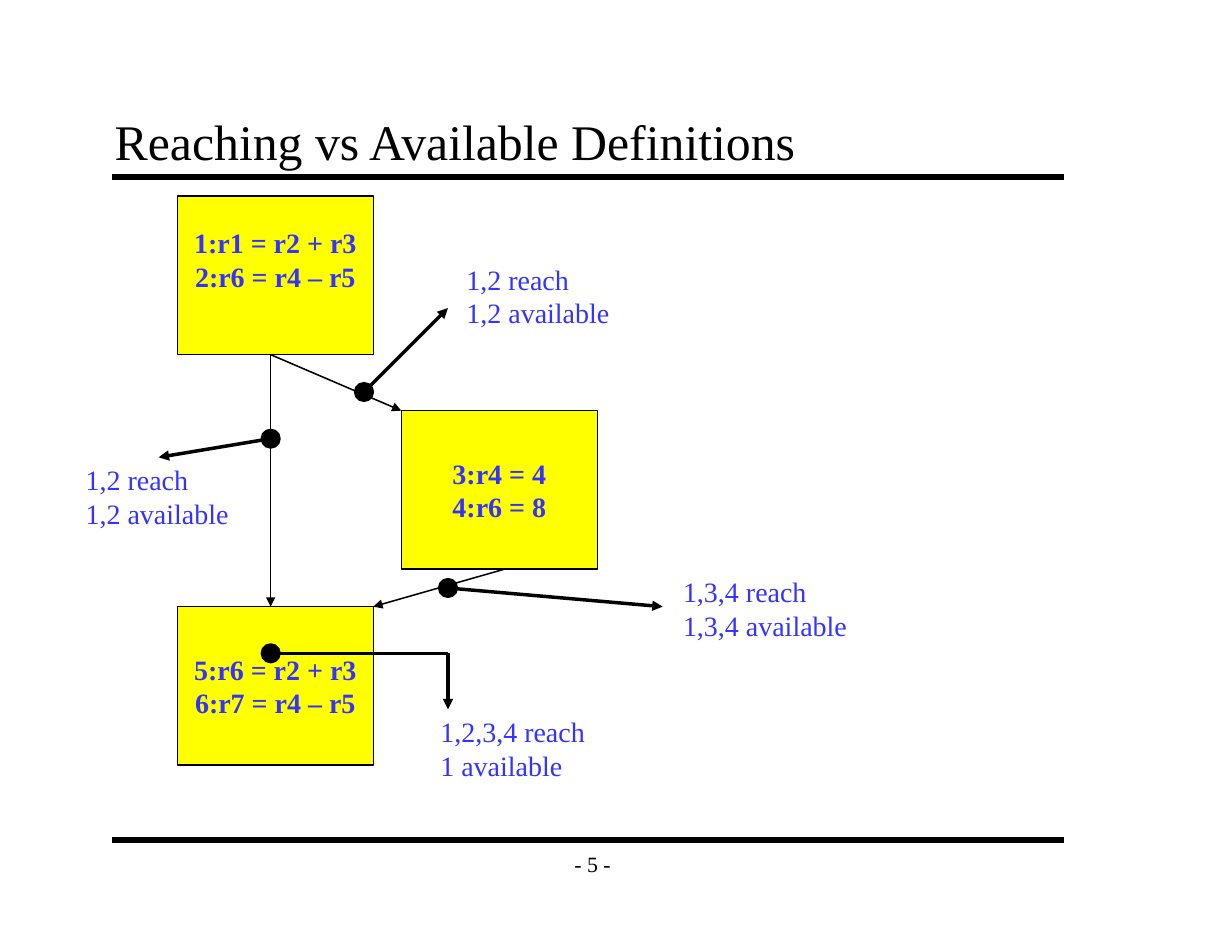
from dataclasses import dataclass

from lxml import etree
from pptx import Presentation
from pptx.dml.color import RGBColor
from pptx.enum.shapes import MSO_CONNECTOR, MSO_SHAPE
from pptx.enum.text import MSO_ANCHOR, PP_ALIGN
from pptx.oxml.ns import qn
from pptx.util import Emu, Pt

STRAIGHT = MSO_CONNECTOR.STRAIGHT
RECTANGLE, OVAL = MSO_SHAPE.RECTANGLE, MSO_SHAPE.OVAL
TOP, MIDDLE, BOTTOM = MSO_ANCHOR.TOP, MSO_ANCHOR.MIDDLE, MSO_ANCHOR.BOTTOM
LEFT, CENTER = PP_ALIGN.LEFT, PP_ALIGN.CENTER
PX = 914400 // 120


@dataclass(frozen=True)
class Theme:
    font: str = "Times New Roman"
    ink: RGBColor = RGBColor(0, 0, 0)
    code: RGBColor = RGBColor(0x33, 0x33, 0xFF)
    block: RGBColor = RGBColor(0xFF, 0xFF, 0)
    title_size: int = 32
    body_size: int = 18
    number_size: int = 14
    rule_width: float = 4
    callout_width: float = 2.25
    thin_width: float = 1


@dataclass(frozen=True)
class Block:
    left: int
    top: int
    text: str
    bottom_inset: int = 6


@dataclass(frozen=True)
class Label:
    left: int
    top: int
    width: int
    text: str


@dataclass(frozen=True)
class Line:
    start: tuple[int, int]
    end: tuple[int, int]
    width: float
    arrow: bool = True


THEME = Theme()
BLOCK_WIDTH, BLOCK_HEIGHT = 210, 170
LABEL_HEIGHT = 84
DOT_SIZE = 20

BLOCKS = [
    Block(190, 210, "1:r1 = r2 + r3\n2:r6 = r4 – r5", bottom_inset=40),
    Block(430, 440, "3:r4 = 4\n4:r6 = 8"),
    Block(190, 650, "5:r6 = r2 + r3\n6:r7 = r4 – r5"),
]
LABELS = [
    Label(460, 760, 179, "1,2,3,4 reach\n1 available"),
    Label(488, 275, 178, "1,2 reach\n1,2 available"),
    Label(720, 610, 200, "1,3,4 reach\n1,3,4 available"),
    Label(80, 490, 178, "1,2 reach\n1,2 available"),
]
RULES = [Line((120, y), (1140, y), THEME.rule_width, arrow=False) for y in (190, 900)]
FLOW = [
    Line((290, 380), (430, 440), THEME.thin_width),
    Line((290, 380), (290, 650), THEME.thin_width),
    Line((540, 610), (400, 650), THEME.thin_width),
]
CALLOUTS = [
    Line((390, 420), (480, 330), THEME.callout_width),
    Line((300, 700), (480, 700), THEME.callout_width, arrow=False),
    Line((480, 700), (480, 760), THEME.callout_width),
    Line((480, 630), (710, 650), THEME.callout_width),
    Line((290, 470), (170, 490), THEME.callout_width),
]
DOTS = [(290, 700), (290, 470), (390, 420), (480, 630)]


def px(*lengths: int) -> list[Emu]:
    return [Emu(length * PX) for length in lengths]


def write(shape, text: str, *, size: int, color: RGBColor, bold: bool = False,
          align=LEFT, anchor=TOP, wrap: bool = False,
          insets: tuple[int, int, int, int] = (12, 6, 12, 6)) -> None:
    frame = shape.text_frame
    frame.word_wrap = wrap
    frame.vertical_anchor = anchor
    (frame.margin_left, frame.margin_top,
     frame.margin_right, frame.margin_bottom) = px(*insets)
    frame.text = text
    for para in frame.paragraphs:
        para.alignment = align
        for span in para.runs:
            span.font.name = THEME.font
            span.font.size = Pt(size)
            span.font.bold = bold
            span.font.color.rgb = color


def draw_shape(page, kind, bounds: tuple[int, int, int, int], fill: RGBColor):
    shape = page.shapes.add_shape(kind, *px(*bounds))
    shape.shadow.inherit = False
    shape.fill.solid()
    shape.fill.fore_color.rgb = fill
    shape.line.color.rgb = THEME.ink
    shape.line.width = Pt(THEME.thin_width)
    return shape


def draw_block(page, block: Block) -> None:
    box = draw_shape(page, RECTANGLE,
                     (block.left, block.top, BLOCK_WIDTH, BLOCK_HEIGHT), THEME.block)
    write(box, block.text, size=THEME.body_size, color=THEME.code, bold=True,
          align=CENTER, anchor=MIDDLE, insets=(12, 6, 12, block.bottom_inset))


def draw_label(page, label: Label) -> None:
    box = page.shapes.add_textbox(*px(label.left, label.top, label.width, LABEL_HEIGHT))
    write(box, label.text, size=THEME.body_size, color=THEME.code)


def draw_line(page, line: Line) -> None:
    connector = page.shapes.add_connector(STRAIGHT, *px(*line.start, *line.end))
    connector.line.color.rgb = THEME.ink
    connector.line.width = Pt(line.width)
    if line.arrow:
        outline = connector.line._get_or_add_ln()
        etree.SubElement(outline, qn("a:tailEnd"), type="triangle")
    etree.SubElement(connector._element.spPr, qn("a:effectLst"))


def draw_dot(page, center: tuple[int, int]) -> None:
    x, y = center
    radius = DOT_SIZE // 2
    draw_shape(page, OVAL, (x - radius, y - radius, DOT_SIZE, DOT_SIZE), THEME.ink)


def main() -> None:
    deck = Presentation()
    deck.slide_width, deck.slide_height = px(1320, 1020)
    page = deck.slides.add_slide(deck.slide_layouts[6])

    for rule in RULES:
        draw_line(page, rule)
    number = page.shapes.add_textbox(*px(590, 900, 90, 50))
    write(number, "- 5 -", size=THEME.number_size, color=THEME.ink,
          align=CENTER, anchor=MIDDLE, insets=(13, 7, 13, 7))
    title = page.shapes.add_textbox(*px(110, 110, 1020, 80))
    write(title, "Reaching vs Available Definitions", size=THEME.title_size,
          color=THEME.ink, anchor=BOTTOM, wrap=True, insets=(13, 7, 13, 7))

    for block in BLOCKS:
        draw_block(page, block)
    for line in FLOW + CALLOUTS:
        draw_line(page, line)
    for label in LABELS:
        draw_label(page, label)
    for center in DOTS:
        draw_dot(page, center)

    deck.save("out.pptx")


if __name__ == "__main__":
    main()
